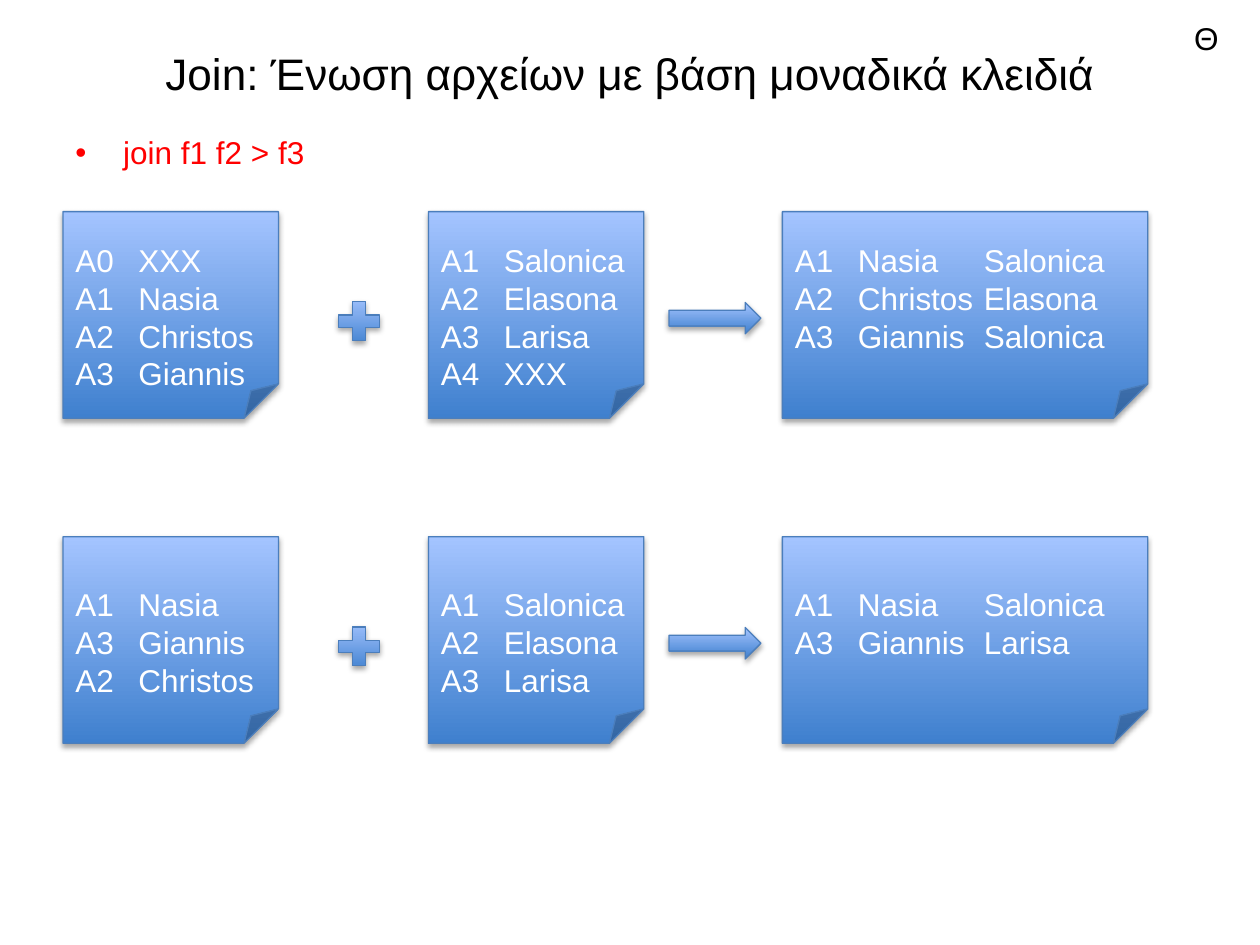
from lxml import etree
from pptx import Presentation
from pptx import util as u
from pptx.dml.color import RGBColor
from pptx.enum import shapes, text
from pptx.oxml import ns

BLACK = RGBColor(0x00, 0x00, 0x00)
WHITE = RGBColor(0xFF, 0xFF, 0xFF)
RED = RGBColor(0xFF, 0x00, 0x00)
DEEP_BLUE = RGBColor(0x3F, 0x80, 0xCE)
PALE_BLUE = RGBColor(0xA4, 0xC4, 0xFF)
EDGE_BLUE = RGBColor(0x4B, 0x7E, 0xBC)


def add_child(parent, tag, **attributes):
    values = {name: str(value) for name, value in attributes.items()}
    return etree.SubElement(parent, ns.qn(tag), values)


class JoinPage:
    """Holds the page and the look of its elements."""

    font_name = "Arial"
    font_size = 18
    tab_stops = (0.5, 1.5)

    def __init__(self, page):
        self.page = page

    def style(self, para, color, size=font_size):
        para.font.name = self.font_name
        para.font.size = u.Pt(size)
        para.font.color.rgb = color

    def label(self, content, place, color=BLACK, size=font_size):
        box = self.page.shapes.add_textbox(*map(u.Inches, place))
        box.text_frame.word_wrap = True
        para = box.text_frame.paragraphs[0]
        para.text = content
        self.style(para, color, size)
        return box

    def title(self, content, place):
        frame = self.label(content, place, size=25.2).text_frame
        frame.vertical_anchor = text.MSO_ANCHOR.MIDDLE
        frame.paragraphs[0].alignment = text.PP_ALIGN.CENTER

    def bullet(self, content, place):
        box = self.page.shapes.add_textbox(*map(u.Inches, place))
        box.text_frame.word_wrap = True
        para = box.text_frame.paragraphs[0]
        para.text = content
        properties = para._p.get_or_add_pPr()
        properties.set("marL", str(u.Inches(0.38)))
        properties.set("indent", str(u.Inches(-0.38)))
        add_child(properties, "a:buFont", typeface=self.font_name)
        add_child(properties, "a:buChar", char="•")
        self.style(para, RED)

    def block(self, kind, place):
        """Add a preset shape with the blue gradient and soft shadow."""
        shape = self.page.shapes.add_shape(kind, *map(u.Inches, place))
        shape.fill.gradient()
        shape.fill.gradient_angle = 90
        for stop, color, position in zip(
            shape.fill.gradient_stops, (DEEP_BLUE, PALE_BLUE), (0, 1)
        ):
            stop.color.rgb = color
            stop.position = position
        shape.line.color.rgb = EDGE_BLUE
        shape.line.width = u.Pt(0.75)
        shape.shadow.inherit = False
        effects = shape._element.spPr.find(ns.qn("a:effectLst"))
        shadow = add_child(effects, "a:outerShdw", blurRad=u.Pt(3.1),
                           dist=u.Pt(1.8), dir=5400000, rotWithShape=0)
        shade = add_child(shadow, "a:srgbClr", val="000000")
        add_child(shade, "a:alpha", val=35000)
        return shape

    def file_note(self, rows, place, top_inset):
        """Add a folded sheet that lists tab-separated records."""
        sheet = self.block(shapes.MSO_SHAPE.FOLDED_CORNER, place)
        frame = sheet.text_frame
        frame.word_wrap = True
        frame.vertical_anchor = text.MSO_ANCHOR.MIDDLE
        frame.margin_top = u.Inches(top_inset)
        frame.text = "\n".join("\t".join(row.split()) for row in rows)
        for para in frame.paragraphs:
            tabs = add_child(para._p.get_or_add_pPr(), "a:tabLst")
            for stop in self.tab_stops:
                add_child(tabs, "a:tab", pos=u.Inches(stop), algn="l")
            para.alignment = text.PP_ALIGN.LEFT
            para.line_spacing = u.Pt(21.6)
            self.style(para, WHITE)

    def join_row(self, top, first, second, result):
        """Add one example: first file + second file -> joined file."""
        self.file_note(first, (0.5, top, 1.71, 1.64), 0.35)
        self.block(shapes.MSO_SHAPE.MATH_PLUS, (2.63, top + 0.66, 0.44, 0.42))
        self.file_note(second, (3.4, top, 1.71, 1.64), 0.35)
        self.block(shapes.MSO_SHAPE.RIGHT_ARROW, (5.31, top + 0.72, 0.73, 0.25))
        self.file_note(result, (6.21, top, 2.9, 1.64), 0.05)


def main():
    deck = Presentation()
    deck.slide_width = u.Inches(10)
    deck.slide_height = u.Inches(7.5)
    page = JoinPage(deck.slides.add_slide(deck.slide_layouts[6]))

    page.title("Join: Ένωση αρχείων με βάση μοναδικά κλειδιά", (0.5, 0.3, 9, 0.55))
    page.bullet("join f1 f2 > f3", (0.5, 1.01, 9, 0.89))
    page.join_row(
        1.68,
        ["A0 XXX", "A1 Nasia", "A2 Christos", "A3 Giannis"],
        ["A1 Salonica", "A2 Elasona", "A3 Larisa", "A4 XXX"],
        ["A1 Nasia Salonica", "A2 Christos Elasona", "A3 Giannis Salonica"],
    )
    page.join_row(
        4.26,
        ["A1 Nasia", "A3 Giannis", "A2 Christos"],
        ["A1 Salonica", "A2 Elasona", "A3 Larisa"],
        ["A1 Nasia Salonica", "A3 Giannis Larisa"],
    )
    page.label("Θ", (9.38, 0.1, 0.5, 0.4))
    deck.save("out.pptx")


if __name__ == "__main__":
    main()
